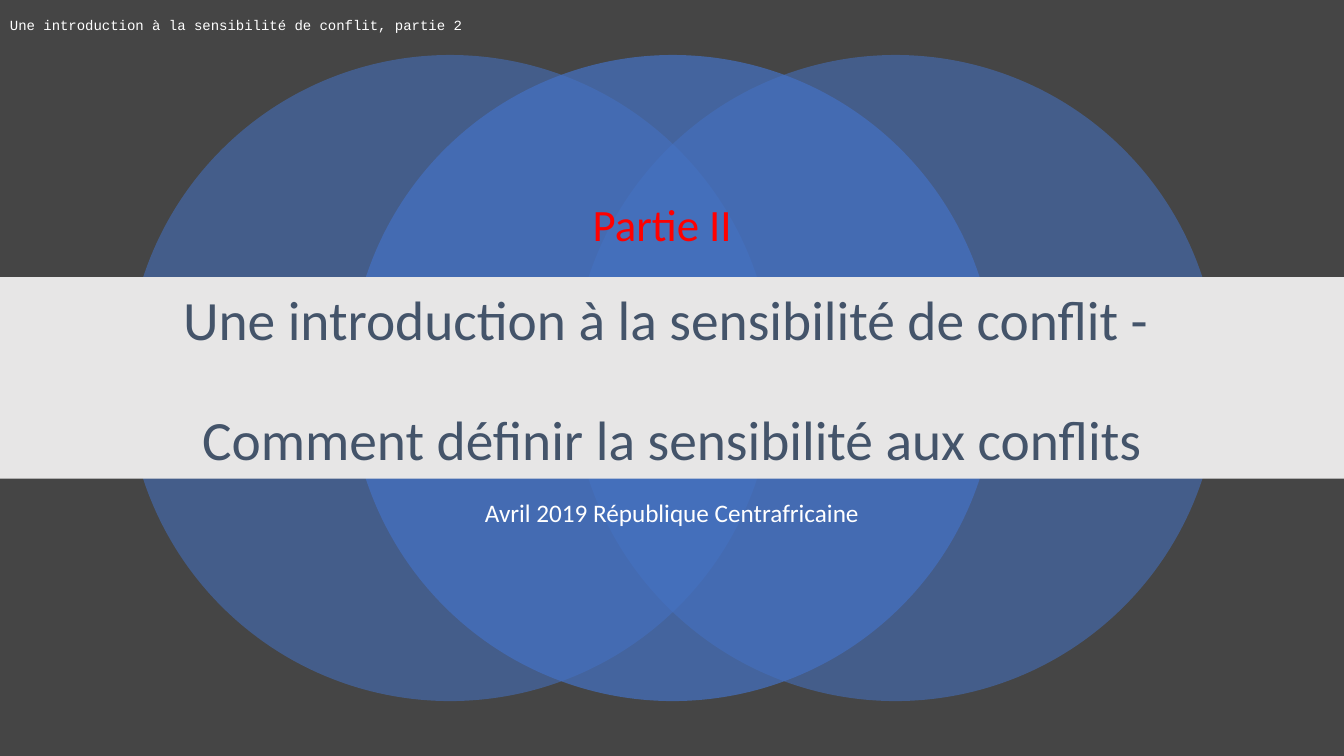
import dataclasses

import lxml.etree
import pptx
import pptx.dml.color
import pptx.enum.shapes
import pptx.enum.text
import pptx.oxml.ns
import pptx.util

Pt = pptx.util.Pt
Align = pptx.enum.text.PP_ALIGN
Anchor = pptx.enum.text.MSO_ANCHOR
Shape = pptx.enum.shapes.MSO_SHAPE


@dataclasses.dataclass(frozen=True)
class Theme:
    background: str = "454545"
    circle: str = "4472C4"
    band: str = "E7E6E6"
    title: str = "44546A"
    accent: str = "FF0000"
    light: str = "FFFFFF"
    sans: str = "Calibri"
    mono: str = "Courier New"
    title_size: float = 39.6
    part_size: float = 32
    date_size: float = 18
    header_size: float = 10


@dataclasses.dataclass(frozen=True)
class Area:
    left: float
    top: float
    width: float
    height: float

    def lengths(self) -> tuple:
        return tuple(Pt(value) for value in dataclasses.astuple(self))


@dataclasses.dataclass(frozen=True)
class Circle:
    step: int
    opacity: int


@dataclasses.dataclass(frozen=True)
class Caption:
    lines: tuple[str, ...]
    area: Area
    size: float
    color: str
    font: str
    align: Align = Align.LEFT
    anchor: Anchor = Anchor.TOP
    line_spacing: float = 1.0
    first_gap: float = 0
    line_gap: float = 0


THEME = Theme()
WIDTH, HEIGHT = 960, 540
DIAMETER = 461.5
CIRCLE_LEFT, CIRCLE_TOP, CIRCLE_STEP = 90.7, 39.3, 159.1
CIRCLES = (Circle(0, 55), Circle(2, 55), Circle(1, 70))
BAND = Area(0, 198, WIDTH, 144)

DATE = Caption(("Avril 2019 République Centrafricaine",), Area(120, 354.3, 720, 96.5),
               THEME.date_size, THEME.light, THEME.sans, Align.CENTER,
               line_spacing=0.9, first_gap=10)
TITLE = Caption(("Une introduction à la sensibilité de conflit - ",
                 "Comment définir la sensibilité aux conflits"),
                Area(120, 218.9, 720, 108.7), THEME.title_size, THEME.title,
                THEME.sans, Align.CENTER, Anchor.MIDDLE, 0.9, line_gap=43)
PART = Caption(("Partie II",), Area(416.2, 136.8, 265.7, 46),
               THEME.part_size, THEME.accent, THEME.sans)
HEADER = Caption(("Une introduction à la sensibilité de conflit, partie 2",),
                 Area(0, 0, WIDTH, 36), THEME.header_size, THEME.light,
                 THEME.mono, anchor=Anchor.MIDDLE)


def rgb(value: str) -> pptx.dml.color.RGBColor:
    return pptx.dml.color.RGBColor.from_string(value)


def add_plain(shapes, kind: Shape, area: Area, color: str, opacity: int = 100) -> None:
    shape = shapes.add_shape(kind, *area.lengths())
    shape.shadow.inherit = False
    shape.fill.solid()
    shape.fill.fore_color.rgb = rgb(color)
    shape.line.fill.background()
    if opacity < 100:
        fill_color = shape.element.spPr.find(".//" + pptx.oxml.ns.qn("a:srgbClr"))
        lxml.etree.SubElement(fill_color, pptx.oxml.ns.qn("a:alpha"), val=str(opacity * 1000))


def write_caption(box, caption: Caption) -> None:
    box.left, box.top, box.width, box.height = caption.area.lengths()
    frame = box.text_frame
    frame.word_wrap = True
    frame.auto_size = pptx.enum.text.MSO_AUTO_SIZE.NONE
    frame.vertical_anchor = caption.anchor
    frame.text = "\n".join(caption.lines)
    for index, para in enumerate(frame.paragraphs):
        para.alignment = caption.align
        para.line_spacing = caption.line_spacing
        para.space_before = Pt(caption.line_gap if index else caption.first_gap)
        para.font.size = Pt(caption.size)
        para.font.name = caption.font
        para.font.color.rgb = rgb(caption.color)


def place_in_front(page, box, caption: Caption) -> None:
    page.shapes.element.append(box.element)
    write_caption(box, caption)


def main() -> None:
    deck = pptx.Presentation()
    deck.slide_width, deck.slide_height = Pt(WIDTH), Pt(HEIGHT)
    page = deck.slides.add_slide(deck.slide_layouts[0])
    page.background.fill.solid()
    page.background.fill.fore_color.rgb = rgb(THEME.background)

    # Overlapping circles
    group = page.shapes.add_group_shape()
    for circle in CIRCLES:
        left = CIRCLE_LEFT + circle.step * CIRCLE_STEP
        add_plain(group.shapes, Shape.OVAL, Area(left, CIRCLE_TOP, DIAMETER, DIAMETER),
                  THEME.circle, circle.opacity)

    # Date, then the band with the title on it
    place_in_front(page, page.placeholders[1], DATE)
    add_plain(page.shapes, Shape.RECTANGLE, BAND, THEME.band)
    place_in_front(page, page.shapes.title, TITLE)

    # Part label and running header
    for caption in (PART, HEADER):
        write_caption(page.shapes.add_textbox(*caption.area.lengths()), caption)

    deck.save("out.pptx")


if __name__ == "__main__":
    main()
